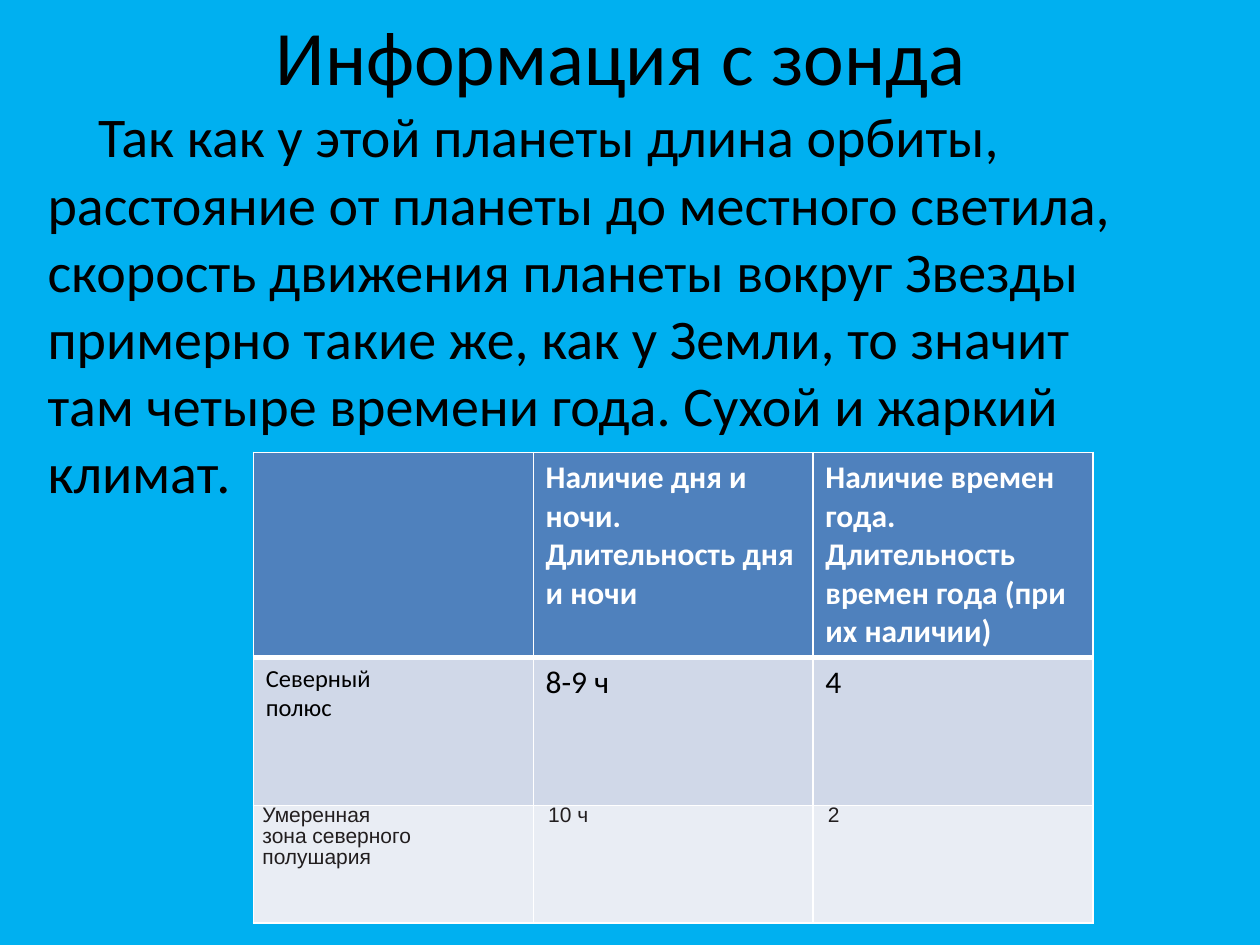
from dataclasses import dataclass

from lxml import etree
from pptx import Presentation
from pptx.dml.color import RGBColor
from pptx.enum.text import MSO_ANCHOR, PP_ALIGN
from pptx.oxml.ns import qn
from pptx.util import Cm, Pt

SKY = RGBColor(0x00, 0xB0, 0xF0)
BLUE = RGBColor(0x4F, 0x81, 0xBD)
BAND_DARK = RGBColor(0xD0, 0xD8, 0xE8)
BAND_LIGHT = RGBColor(0xE9, 0xED, 0xF4)
WHITE = RGBColor(0xFF, 0xFF, 0xFF)
BLACK = RGBColor(0x00, 0x00, 0x00)
INK = RGBColor(0x22, 0x1E, 0x1F)
LEFT, CENTER, JUSTIFY = PP_ALIGN.LEFT, PP_ALIGN.CENTER, PP_ALIGN.JUSTIFY
TOP, MIDDLE = MSO_ANCHOR.TOP, MSO_ANCHOR.MIDDLE

TITLE = "Информация с зонда"
BODY = (
    "Так как у этой планеты длина орбиты, расстояние от планеты до местного "
    "светила, скорость движения планеты вокруг Звезды примерно такие же, как "
    "у Земли, то значит там четыре времени года. Сухой и жаркий климат."
)
COLUMN_WIDTH = 5.64


@dataclass(frozen=True)
class Entry:
    """Text and format of one table cell."""

    text: str
    size: float = 18
    font: str = "Calibri"
    color: RGBColor = BLACK
    bold: bool = False
    align: PP_ALIGN = LEFT
    spacing: float | None = None
    side: float = 0.25
    top: float = 0.13


@dataclass(frozen=True)
class Band:
    """One table row: height in centimetres, fill, line widths and cells."""

    height: float
    fill: RGBColor
    top_line: float
    bottom_line: float
    entries: tuple[Entry, ...]


def heading(text: str) -> Entry:
    """Describe a header cell."""
    return Entry(text, color=WHITE, bold=True)


def zone(text: str, align: PP_ALIGN = JUSTIFY, side: float = 0.3) -> Entry:
    """Describe a tightly set cell of the last row."""
    return Entry(text, 12, "Arial", INK, align=align, spacing=12.1, side=side, top=0)


BANDS = (
    Band(4.13, BLUE, 1, 3, (
        Entry(""),
        heading("Наличие дня и ночи. Длительность дня и ночи"),
        heading("Наличие времен года. Длительность времен года (при их наличии)"),
    )),
    Band(2.99, BAND_DARK, 3, 1, (
        Entry("Северный\nполюс", 14), Entry("8-9 ч"), Entry("4"),
    )),
    Band(2.37, BAND_LIGHT, 1, 1, (
        zone("Умеренная\nзона северного\nполушария", LEFT, 0.18),
        zone("10 ч"), zone("2"),
    )),
)


def write(frame, text: str, *, size: float, font: str = "Calibri",
          color: RGBColor = BLACK, bold: bool = False, align: PP_ALIGN = LEFT,
          spacing: float | None = None, indent: float = 0) -> None:
    """Fill a text frame with one paragraph per line of text."""
    frame.word_wrap = True
    for index, line in enumerate(text.split("\n")):
        para = frame.add_paragraph() if index else frame.paragraphs[0]
        para.alignment = align
        if spacing:
            para.line_spacing = Pt(spacing)
        if indent:
            para._p.get_or_add_pPr().set("indent", str(Cm(indent)))
        span = para.add_run()
        span.text = line
        span.font.size = Pt(size)
        span.font.name = font
        span.font.bold = bold
        span.font.color.rgb = color


def add_text(page, text: str, left: float, top: float, width: float, height: float,
             *, anchor: MSO_ANCHOR = TOP, **style) -> None:
    """Place a text box on the page."""
    box = page.shapes.add_textbox(Cm(left), Cm(top), Cm(width), Cm(height))
    box.text_frame.vertical_anchor = anchor
    write(box.text_frame, text, **style)


def set_borders(cell, top: float, bottom: float) -> None:
    """Draw white lines around a cell."""
    properties = cell._tc.get_or_add_tcPr()
    for tag, width in (("lnL", 1), ("lnR", 1), ("lnT", top), ("lnB", bottom)):
        line = etree.SubElement(properties, qn(f"a:{tag}"), w=str(Pt(width)))
        fill = etree.SubElement(line, qn("a:solidFill"))
        etree.SubElement(fill, qn("a:srgbClr"), val=str(WHITE))


def fill_cell(cell, entry: Entry, band: Band) -> None:
    """Format one table cell and write its text."""
    set_borders(cell, band.top_line, band.bottom_line)
    cell.fill.solid()
    cell.fill.fore_color.rgb = band.fill
    cell.margin_left = cell.margin_right = Cm(entry.side)
    cell.margin_top = cell.margin_bottom = Cm(entry.top)
    if entry.text:
        write(cell.text_frame, entry.text, size=entry.size, font=entry.font,
              color=entry.color, bold=entry.bold, align=entry.align,
              spacing=entry.spacing)


def add_climate_table(page, left: float, top: float) -> None:
    """Place the table of day lengths and seasons."""
    columns = len(BANDS[0].entries)
    height = sum(band.height for band in BANDS)
    table = page.shapes.add_table(len(BANDS), columns, Cm(left), Cm(top),
                                  Cm(COLUMN_WIDTH * columns), Cm(height)).table
    table.horz_banding = False
    table.first_row = False
    for column in table.columns:
        column.width = Cm(COLUMN_WIDTH)
    for row, band in zip(table.rows, BANDS):
        row.height = Cm(band.height)
        for cell, entry in zip(row.cells, band.entries):
            fill_cell(cell, entry, band)


def main() -> None:
    """Build the slide and save it."""
    deck = Presentation()
    deck.slide_width, deck.slide_height = Cm(25.4), Cm(19.05)
    page = deck.slides.add_slide(deck.slide_layouts[6])
    page.background.fill.solid()
    page.background.fill.fore_color.rgb = SKY
    add_text(page, TITLE, 1.09, -0.48, 22.86, 3.18, anchor=MIDDLE, size=44, align=CENTER)
    add_text(page, BODY, 0.71, 1.93, 22.86, 12.57, size=32, indent=1.02)
    add_climate_table(page, 5.11, 9.12)
    deck.save("out.pptx")


if __name__ == "__main__":
    main()
